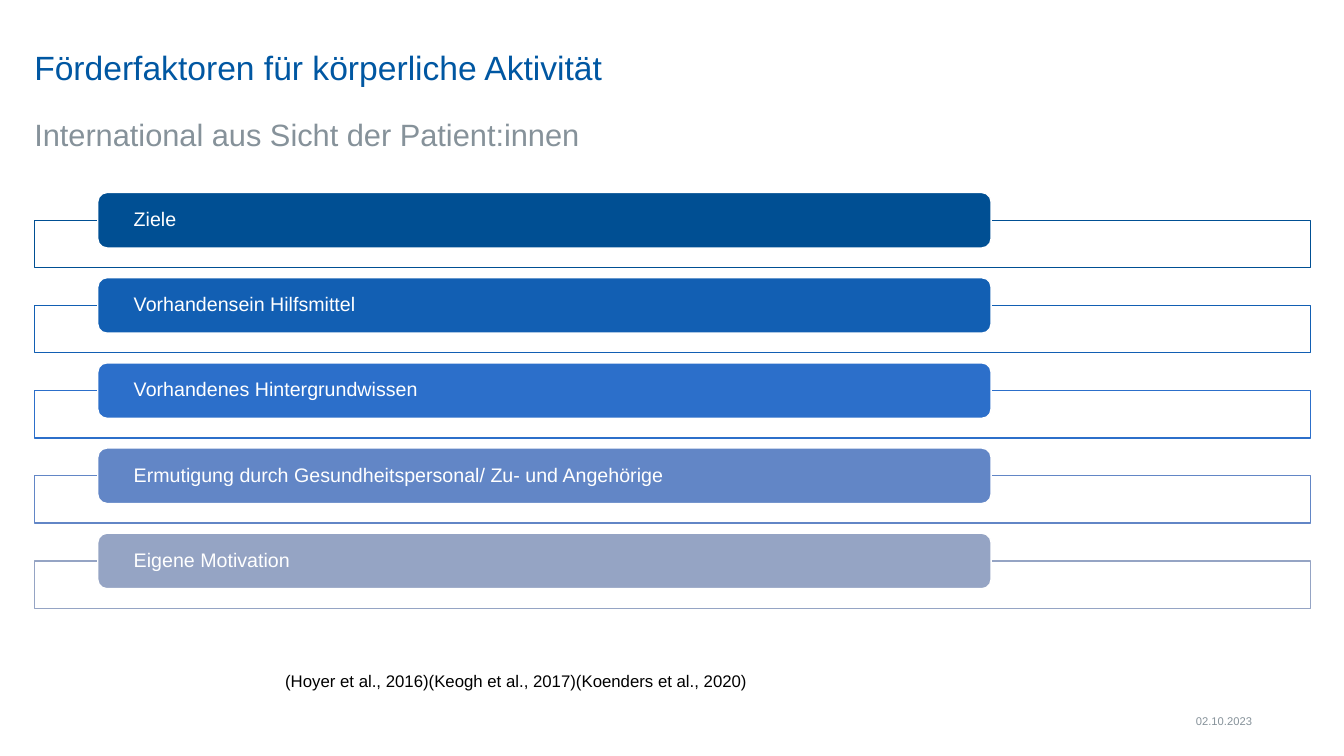
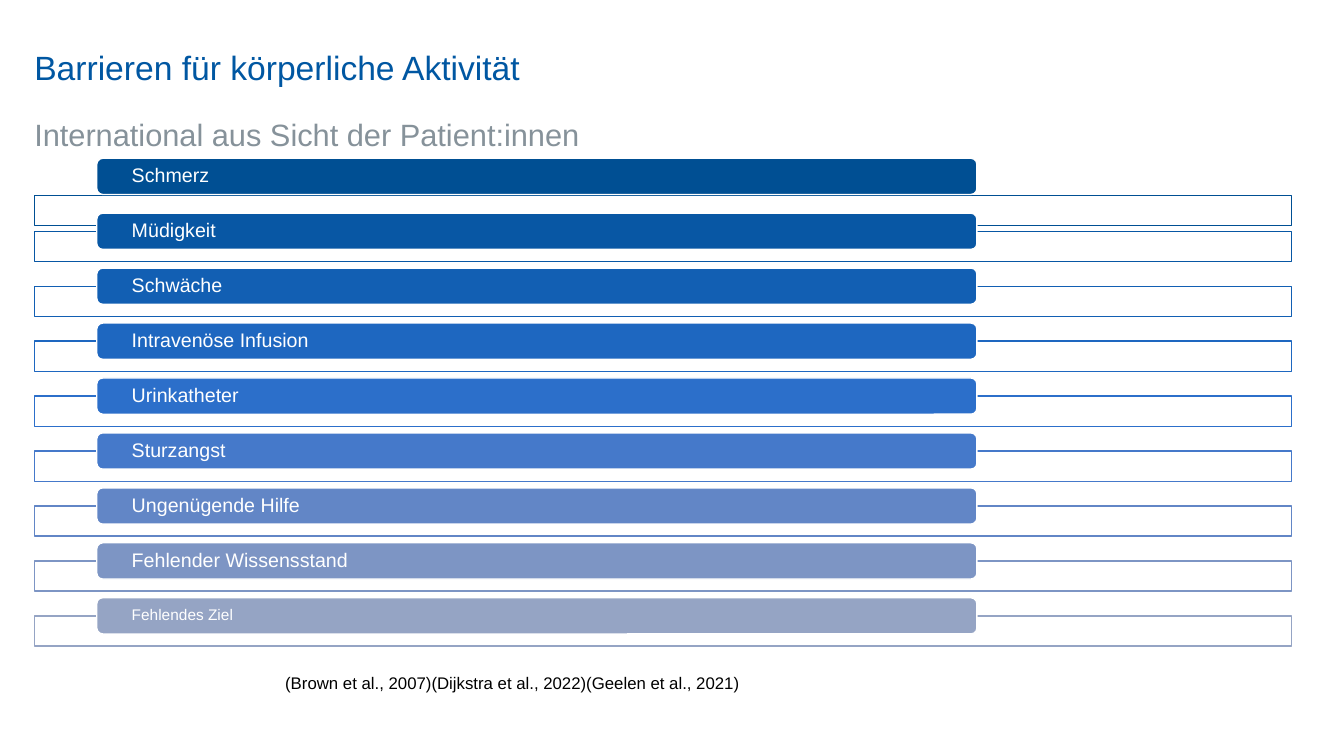
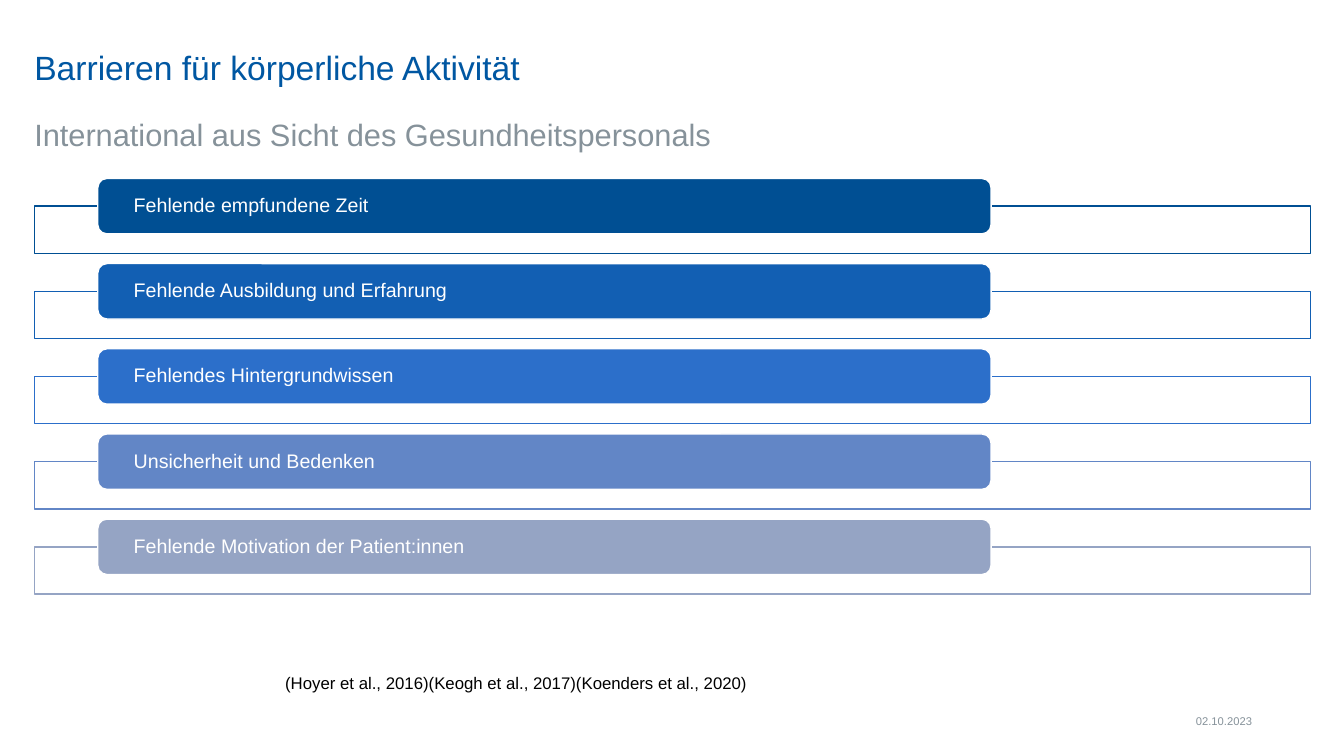
from lxml import etree
from pptx import Presentation
from pptx.dml.color import RGBColor
from pptx.enum.shapes import MSO_SHAPE
from pptx.enum.text import MSO_ANCHOR, MSO_AUTO_SIZE, PP_ALIGN
from pptx.oxml.ns import qn
from pptx.util import Inches, Pt

# Shared style
FONT = "Arial"
TITLE_BLUE, GREY, WHITE, BLACK = "0057A2", "86929A", "FFFFFF", "000000"
SHADES = ["004F93", "0857A4", "125FB3", "1E67C0", "2C6FCA",
          "4579CA", "6286C6", "7D95C4", "95A4C4"]
LEFT, CONTENT_WIDTH = 0.34, 12.66
BAR_INSET = 0.33
RECT, ROUNDED = MSO_SHAPE.RECTANGLE, MSO_SHAPE.ROUNDED_RECTANGLE
MIDDLE, TOP = MSO_ANCHOR.MIDDLE, MSO_ANCHOR.TOP
ALIGN_LEFT, ALIGN_RIGHT = PP_ALIGN.LEFT, PP_ALIGN.RIGHT
NO_AUTOFIT = MSO_AUTO_SIZE.NONE

# Sizes of the two list styles: bar left, bar width, bar height, frame width, frame height
WIDE_ROWS = dict(bar_left=0.97, bar_width=8.86, bar_height=0.55,
                 frame_width=12.66, frame_height=0.47)
NARROW_ROWS = dict(bar_left=0.96, bar_width=8.73, bar_height=0.36,
                   frame_width=12.47, frame_height=0.3)


def color(value):
    return RGBColor.from_string(value)


def inches(*lengths):
    return [Inches(length) for length in lengths]


def write(shape, text, size, ink, align=ALIGN_LEFT, anchor=TOP, spacing=1.0,
          insets=(0, 0, 0, 0)):
    """Put one formatted paragraph into a shape."""
    frame = shape.text_frame
    frame.word_wrap = True
    frame.auto_size = NO_AUTOFIT
    frame.vertical_anchor = anchor
    (frame.margin_left, frame.margin_top,
     frame.margin_right, frame.margin_bottom) = inches(*insets)
    frame.text = text
    para = frame.paragraphs[0]
    para.alignment = align
    para.line_spacing = spacing
    para.font.name = FONT
    para.font.size = Pt(size)
    para.font.color.rgb = color(ink)


def add_text(page, area, text, size, ink, **style):
    write(page.shapes.add_textbox(*inches(*area)), text, size, ink, **style)


def add_block(page, kind, area, fill, line):
    shape = page.shapes.add_shape(kind, *inches(*area))
    shape.shadow.inherit = False
    shape.fill.solid()
    shape.fill.fore_color.rgb = color(fill)
    shape.line.color.rgb = color(line)
    shape.line.width = Pt(1)
    return shape


def set_opacity(shape, percent):
    tone = shape.fill._xPr.find(qn("a:solidFill"))[0]
    etree.SubElement(tone, qn("a:alpha")).set("val", str(percent * 1000))


def add_page(deck, title, subtitle, source, source_top=6.62, date=None):
    """Title-only page with subtitle, source line and optional date."""
    page = deck.slides.add_slide(deck.slide_layouts[5])
    heading = page.shapes.title
    heading.left, heading.top, heading.width, heading.height = inches(LEFT, 0.28, 9.4, 0.83)
    write(heading, title, 24, TITLE_BLUE, anchor=MIDDLE, spacing=0.9)
    add_text(page, (LEFT, 1.11, CONTENT_WIDTH, 0.4), subtitle, 22, GREY, spacing=1.1)
    add_text(page, (2.73, source_top, 4.92, 0.28), source, 12, BLACK,
             insets=(0.1, 0.05, 0.1, 0.05))
    if date:
        add_text(page, (11.15, 7.09, 1.27, 0.13), date, 8, GREY,
                 align=ALIGN_RIGHT, anchor=MIDDLE)
    return page


def add_rows(page, labels, shades, first_top, last_top, bar_left, bar_width,
             bar_height, frame_width, frame_height, first_frame_shift=0, last_size=14):
    """Evenly spaced bars, each on an outlined frame starting at the bar's middle."""
    last = len(labels) - 1
    pitch = (last_top - first_top) / last
    for index, (label, shade) in enumerate(zip(labels, shades)):
        top = first_top + index * pitch
        frame_top = top + bar_height / 2 + (first_frame_shift if index == 0 else 0)
        frame = add_block(page, RECT, (LEFT, frame_top, frame_width, frame_height),
                          WHITE, shade)
        set_opacity(frame, 90)
        bar = add_block(page, ROUNDED, (bar_left, top, bar_width, bar_height),
                        shade, WHITE)
        write(bar, label, last_size if index == last else 14, WHITE, anchor=MIDDLE,
              spacing=0.9, insets=(BAR_INSET, 0, BAR_INSET, 0))


def main():
    deck = Presentation()
    deck.slide_width, deck.slide_height = inches(13.33, 7.5)
    patients = "International aus Sicht der Patient:innen"
    barriers = "Barrieren für körperliche Aktivität"
    main_source = "(Hoyer et al., 2016)(Keogh et al., 2017)(Koenders et al., 2020)"
    date = "02.10.2023"

    # Enabling factors, patients
    page = add_page(deck, "Förderfaktoren für körperliche Aktivität", patients,
                    main_source, source_top=6.6, date=date)
    add_rows(page, ["Ziele", "Vorhandensein Hilfsmittel", "Vorhandenes Hintergrundwissen",
                    "Ermutigung durch Gesundheitspersonal/ Zu- und Angehörige",
                    "Eigene Motivation"],
             SHADES[::2], 1.91, 5.29, **WIDE_ROWS)

    # Barriers, patients
    page = add_page(deck, barriers, patients,
                    "(Brown et al., 2007)(Dijkstra et al., 2022)(Geelen et al., 2021)")
    add_rows(page, ["Schmerz", "Müdigkeit", "Schwäche", "Intravenöse Infusion",
                    "Urinkatheter", "Sturzangst", "Ungenügende Hilfe",
                    "Fehlender Wissensstand", "Fehlendes Ziel"],
             SHADES, 1.57, 5.93, first_frame_shift=0.19, last_size=11, **NARROW_ROWS)

    # Barriers, health staff
    page = add_page(deck, barriers, "International aus Sicht des Gesundheitspersonals",
                    main_source, date=date)
    add_rows(page, ["Fehlende empfundene Zeit", "Fehlende Ausbildung und Erfahrung",
                    "Fehlendes Hintergrundwissen", "Unsicherheit und Bedenken",
                    "Fehlende Motivation der Patient:innen"],
             SHADES[::2], 1.77, 5.15, **WIDE_ROWS)

    deck.save("out.pptx")


if __name__ == "__main__":
    main()
